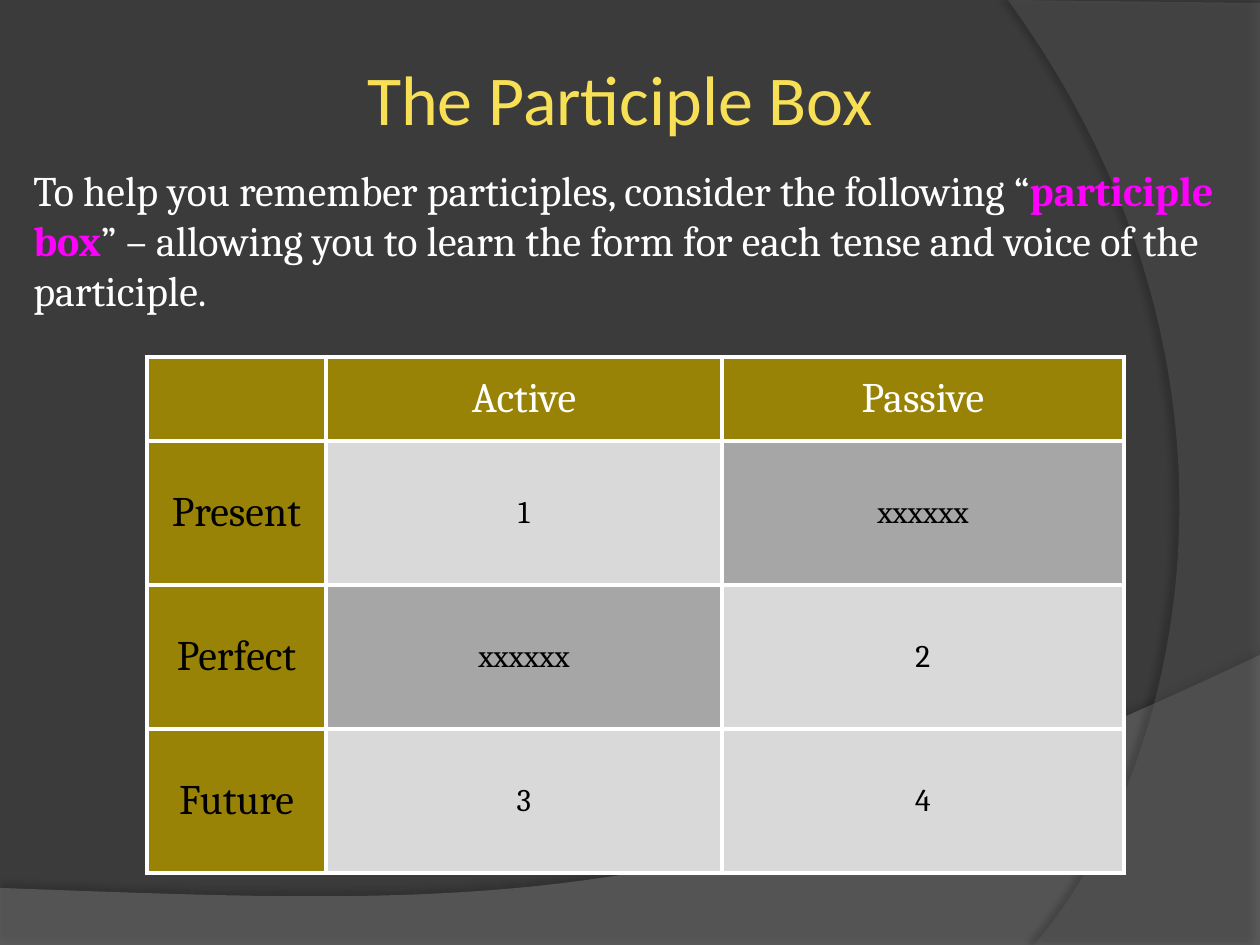
from lxml.etree import SubElement
from pptx import Presentation
from pptx.dml.color import RGBColor as Rgb
from pptx.enum.text import MSO_ANCHOR as Anchor, PP_ALIGN as Align
from pptx.oxml import parse_xml
from pptx.oxml.ns import nsdecls, qn
from pptx.util import Emu, Pt

COLORS = {
    "back": "3B3B3B", "wave": "7F7F7F", "arc": "5E5E5E", "title": "F7DF56",
    "white": "FFFFFF", "black": "000000", "accent": "FF00FF",
    "header": "998307", "open": "D9D9D9", "blocked": "A6A6A6",
}
SCALE = 914400 / 126
STEPS = 48


def px(value):
    return Emu(round(value * SCALE))


def add_span(para, text, size, color, font="Cambria", bold=False):
    span = para.add_run()
    span.text = text
    span.font.name = font
    span.font.size = Pt(size)
    span.font.bold = bold
    span.font.color.rgb = Rgb.from_string(COLORS[color])


deck = Presentation()
deck.slide_width, deck.slide_height = px(1260), px(945)
page = deck.slides.add_slide(deck.slide_layouts[6])
page.background.fill.solid()
page.background.fill.fore_color.rgb = Rgb.from_string(COLORS["back"])

swooshes = [
    ("wave", 45, 35, 44450, 270, [(0, 946), (1260, 946)],
     [(1260, 655), (704, 919), (493, 906), (0, 888)]),
    ("arc", 40, 45, 50800, 180, [(1260, 3), (1260, 945)],
     [(1034, 945), (1178, 780), (1283, 378), (1008, 0)]),
]
for color, opacity, shade, distance, angle, corners, bezier in swooshes:
    points = list(corners)
    for step in range(STEPS + 1):
        t = step / STEPS
        weights = ((1 - t) ** 3, 3 * t * (1 - t) ** 2, 3 * t * t * (1 - t), t ** 3)
        points.append(tuple(sum(w * p[axis] for w, p in zip(weights, bezier))
                            for axis in (0, 1)))
    outline = [(px(x), px(y)) for x, y in points]
    builder = page.shapes.build_freeform(*outline[0], scale=1.0)
    builder.add_line_segments(outline[1:], close=True)
    swoosh = builder.convert_to_shape()
    swoosh.fill.solid()
    swoosh.fill.fore_color.rgb = Rgb.from_string(COLORS[color])
    swoosh.line.fill.background()
    props = swoosh.element.spPr
    tint = props.find(qn("a:solidFill")).find(qn("a:srgbClr"))
    SubElement(tint, qn("a:alpha"), val=str(opacity * 1000))
    props.append(parse_xml(
        f'<a:effectLst {nsdecls("a")}><a:outerShdw blurRad="50800" '
        f'dist="{distance}" dir="{angle * 60000}" algn="ctr" rotWithShape="0">'
        f'<a:srgbClr val="{COLORS["black"]}"><a:alpha val="{shade * 1000}"/>'
        '</a:srgbClr></a:outerShdw></a:effectLst>'))

title_box = page.shapes.add_textbox(px(53), px(10), px(1134), px(174))
title_frame = title_box.text_frame
title_frame.word_wrap = True
title_frame.vertical_anchor = Anchor.MIDDLE
title_frame.margin_left = title_frame.margin_right = px(6)
title_frame.margin_top = title_frame.margin_bottom = px(6)
title_para = title_frame.paragraphs[0]
title_para.alignment = Align.CENTER
add_span(title_para, "The Participle Box", 40, "title", "Calibri")

rows = [
    ["", "Active", "Passive"],
    ["Present", "1", "xxxxxx"],
    ["Perfect", "xxxxxx", "2"],
    ["Future", "3", "4"],
]
widths = [179, 396, 402]
heights = [84, 144, 144, 144]
table = page.shapes.add_table(len(rows), len(widths), px(147), px(357),
                              px(sum(widths)), px(sum(heights))).table
for column, width in zip(table.columns, widths):
    column.width = px(width)
for row, height in zip(table.rows, heights):
    row.height = px(height)
for r, labels in enumerate(rows):
    for c, label in enumerate(labels):
        cell = table.cell(r, c)
        is_header = r == 0 or c == 0
        fill = "header" if is_header else "blocked" if label == "xxxxxx" else "open"
        cell.fill.solid()
        cell.fill.fore_color.rgb = Rgb.from_string(COLORS[fill])
        cell.vertical_anchor = Anchor.MIDDLE
        for index, side in enumerate("LRTB"):
            cell._tc.tcPr.insert(index, parse_xml(
                f'<a:ln{side} {nsdecls("a")} w="{Pt(3)}"><a:solidFill>'
                f'<a:srgbClr val="{COLORS["white"]}"/></a:solidFill></a:ln{side}>'))
        para = cell.text_frame.paragraphs[0]
        para.alignment = Align.CENTER
        if label:
            add_span(para, label, 24 if is_header else 18,
                     "white" if r == 0 else "black")

intro_box = page.shapes.add_textbox(px(21), px(158), px(1207), px(165))
intro_box.text_frame.word_wrap = True
intro_para = intro_box.text_frame.paragraphs[0]
add_span(intro_para, "To help you remember participles, consider the following “",
         24, "white")
add_span(intro_para, "participle box", 24, "accent", bold=True)
add_span(intro_para, "” – allowing you to learn the form for each tense and voice "
         "of the participle.", 24, "white")

deck.save("out.pptx")
